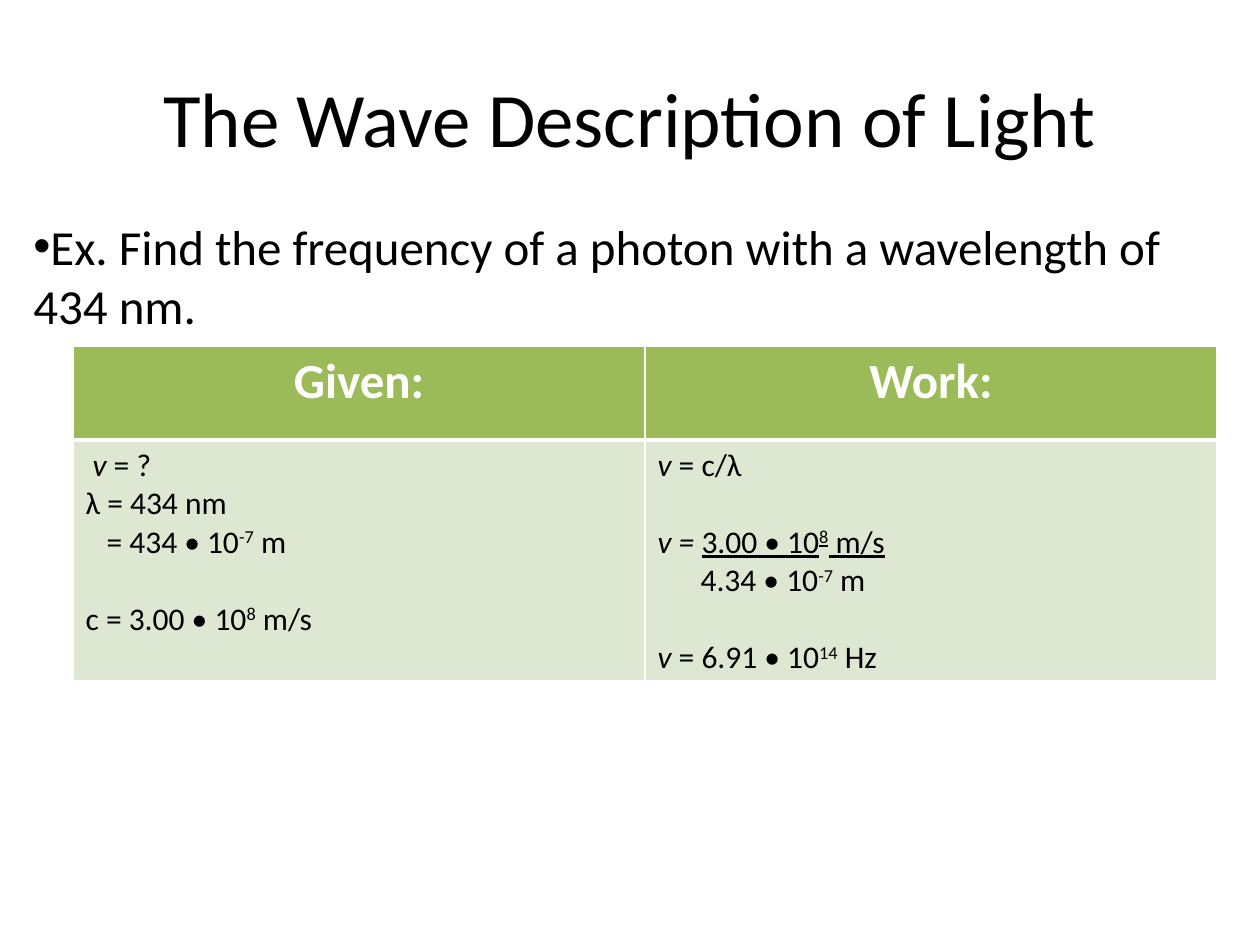
from lxml.etree import SubElement
from pptx import Presentation
from pptx.dml.color import RGBColor
from pptx.enum.text import MSO_ANCHOR, MSO_AUTO_SIZE, PP_ALIGN
from pptx.oxml.ns import qn
from pptx.util import Emu, Pt

BLACK = RGBColor(0x00, 0x00, 0x00)
WHITE = RGBColor(0xFF, 0xFF, 0xFF)
GREEN = RGBColor(0x9B, 0xBB, 0x59)
PALE_GREEN = RGBColor(0xDE, 0xE7, 0xD1)
FONT = "Calibri"
LINE_GAP = Pt(22)
ITALIC = {"italic": True}
UNDERLINE = {"underline": True}
RAISED = {"raised": True}

HEADINGS = ["Given:", "Work:"]
GIVEN = [
    (7, False, [("v", ITALIC), (" = ?", {})]),
    (0, False, [("λ = 434 nm", {})]),
    (21, False, [("= 434 • 10", {}), ("-7", RAISED), (" m", {})]),
    (0, True, [("c = 3.00 • 10", {}), ("8", RAISED), (" m/s", {})]),
]
WORK = [
    (0, False, [("v", ITALIC), (" = c/λ", {})]),
    (0, True, [("v = ", ITALIC), ("3.00 • 10", UNDERLINE),
               ("8", UNDERLINE | RAISED), (" m/s", UNDERLINE)]),
    (43, False, [("4.34 • 10", {}), ("-7", RAISED), (" m", {})]),
    (0, True, [("v", ITALIC), (" = 6.91 • 10", {}), ("14", RAISED), (" Hz", {})]),
]


def px(length):
    """Turn pixels into EMU."""
    return Emu(length * 914400 // 126)


def write_span(para, text, size=18, color=BLACK, bold=False, italic=False,
               underline=False, raised=False):
    """Append formatted text to a paragraph."""
    span = para.add_run()
    span.text = text
    font = span.font
    font.name, font.size, font.bold = FONT, Pt(size), bold
    font.italic, font.underline = italic, underline
    font.color.rgb = color
    if raised:
        span._r.get_or_add_rPr().set("baseline", "30000")


def add_text_box(page, box):
    """Add a wrapping text box and return its text frame."""
    frame = page.shapes.add_textbox(*map(px, box)).text_frame
    frame.word_wrap = True
    return frame


def add_title(page, box):
    """Place the centred slide title."""
    frame = add_text_box(page, box)
    frame.vertical_anchor = MSO_ANCHOR.MIDDLE
    para = frame.paragraphs[0]
    para.alignment = PP_ALIGN.CENTER
    write_span(para, "The Wave Description of Light", size=44)


def add_question(page, box):
    """Place the bulleted example question."""
    frame = add_text_box(page, box)
    frame.auto_size = MSO_AUTO_SIZE.SHAPE_TO_FIT_TEXT
    para = frame.paragraphs[0]
    properties = para._p.get_or_add_pPr()
    SubElement(properties, qn("a:buFont"), typeface="Arial")
    SubElement(properties, qn("a:buChar"), char="•")
    write_span(para, "Ex. Find the frequency of a photon with a wavelength of 434 nm.",
               size=28)


def style_cell(cell, color, top, bottom):
    """Give a cell white borders and a solid fill."""
    properties = cell._tc.get_or_add_tcPr()
    for side, width in zip("LRTB", (1, 1, top, bottom)):
        line = SubElement(properties, qn(f"a:ln{side}"), w=str(Pt(width)))
        fill = SubElement(line, qn("a:solidFill"))
        SubElement(fill, qn("a:srgbClr"), val=str(WHITE))
    cell.fill.solid()
    cell.fill.fore_color.rgb = color


def fill_steps(cell, steps):
    """Write solution steps, each with its indent and gap above."""
    frame = cell.text_frame
    for index, (indent, gap, spans) in enumerate(steps):
        para = frame.add_paragraph() if index else frame.paragraphs[0]
        if indent:
            para._p.get_or_add_pPr().set("marL", str(px(indent)))
        if gap:
            para.space_before = LINE_GAP
        for text, style in spans:
            write_span(para, text, **style)


def add_solution_table(page, box):
    """Place the table of given values and worked steps."""
    left, top, width, height = box
    table = page.shapes.add_table(2, 2, *map(px, box)).table
    header_height = 94
    table.rows[0].height = px(header_height)
    table.rows[1].height = px(height - header_height)
    for column, (heading, steps) in enumerate(zip(HEADINGS, (GIVEN, WORK))):
        table.columns[column].width = px(width // 2)
        header, body = table.cell(0, column), table.cell(1, column)
        style_cell(header, GREEN, top=1, bottom=3)
        style_cell(body, PALE_GREEN, top=3, bottom=1)
        para = header.text_frame.paragraphs[0]
        para.alignment = PP_ALIGN.CENTER
        write_span(para, heading, size=28, color=WHITE, bold=True)
        fill_steps(body, steps)


def main():
    """Build and save the slide."""
    deck = Presentation()
    deck.slide_width, deck.slide_height = px(1260), px(945)
    page = deck.slides.add_slide(deck.slide_layouts[6])
    add_title(page, (63, 38, 1134, 157))
    add_question(page, (21, 210, 1197, 131))
    add_solution_table(page, (73, 346, 1144, 334))
    deck.save("out.pptx")


if __name__ == "__main__":
    main()
